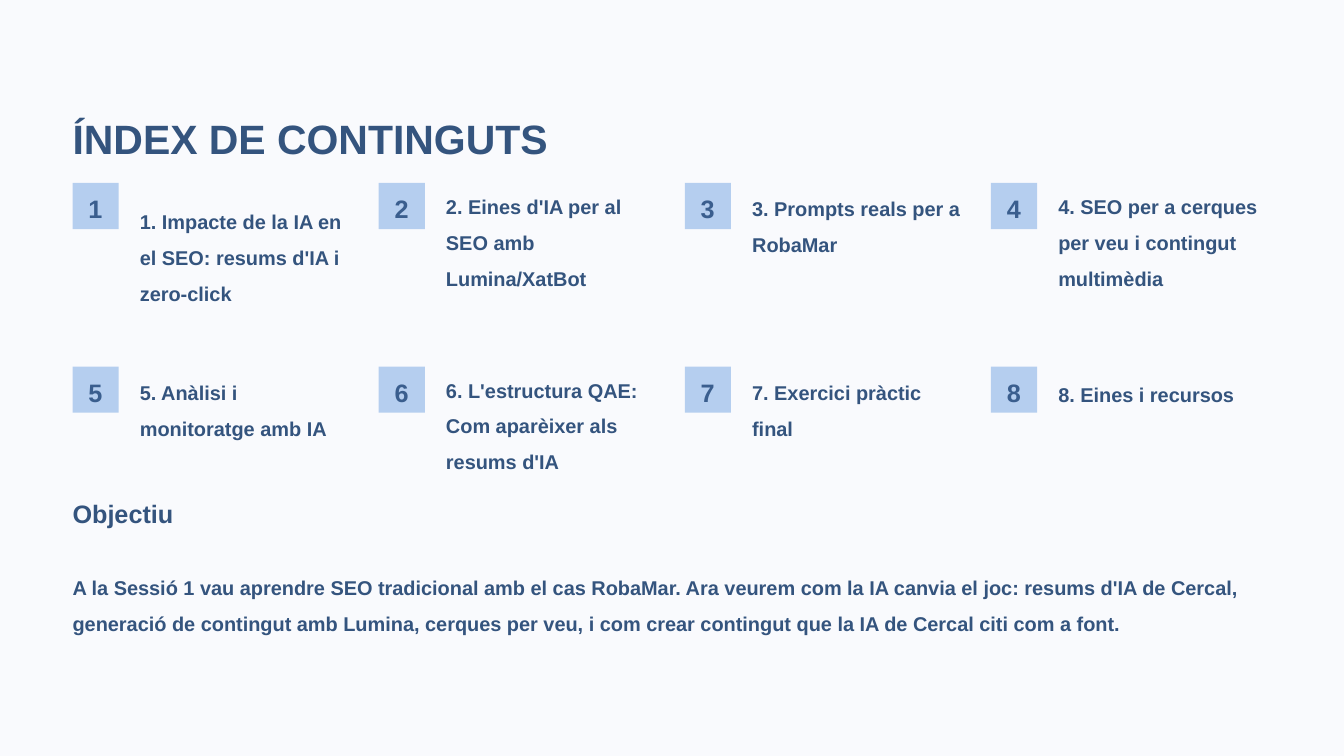
from lxml import etree
from pptx import Presentation
from pptx.dml.color import RGBColor
from pptx.enum.shapes import MSO_SHAPE
from pptx.enum.text import MSO_ANCHOR, MSO_AUTO_SIZE, PP_ALIGN
from pptx.oxml.ns import qn
from pptx.util import Inches, Pt

COLORS = {"wash": "F6F8FC", "tile": "B5CEEF", "text": "34547E", "number": "3A5E8E"}
LEFT, WIDTH = 0.96, 15.85
COL_STEP, ROW_TOP, ROW_STEP = 4.05, 2.42, 2.43
TILE, LINE_HEIGHT = 0.61, 0.41

# Entry text and the number of lines its box is tall
TOPICS = [
    ("1. Impacte de la IA en el SEO: resums d'IA i zero-click", 4),
    ("2. Eines d'IA per al SEO amb Lumina/XatBot", 3),
    ("3. Prompts reals per a RobaMar", 2),
    ("4. SEO per a cerques per veu i contingut multimèdia", 3),
    ("5. Anàlisi i monitoratge amb IA", 2),
    ("6. L'estructura QAE: Com aparèixer als resums d'IA", 3),
    ("7. Exercici pràctic final", 2),
    ("8. Eines i recursos", 1),
]
OBJECTIVE = (
    "A la Sessió 1 vau aprendre SEO tradicional amb el cas RobaMar. "
    "Ara veurem com la IA canvia el joc: resums d'IA de Cercal, "
    "generació de contingut amb Lumina, cerques per veu, "
    "i com crear contingut que la IA de Cercal citi com a font."
)

prs = Presentation()
prs.slide_width, prs.slide_height = Inches(17.78), Inches(10)
s = prs.slides.add_slide(prs.slide_layouts[5])


def add_rect(x, y, w, h, color):
    sp = s.shapes.add_shape(MSO_SHAPE.RECTANGLE, Inches(x), Inches(y), Inches(w), Inches(h))
    sp.shadow.inherit = False
    sp.fill.solid()
    sp.fill.fore_color.rgb = RGBColor.from_string(COLORS[color])
    sp.line.fill.background()
    return sp


def put_text(text, x, y, w, h, size=19, spacing=1.5, color="text", sp=None):
    """Write bold text in a new text box, or in sp if one is given."""
    sp = sp or s.shapes.add_textbox(0, 0, 0, 0)
    sp.left, sp.top, sp.width, sp.height = Inches(x), Inches(y), Inches(w), Inches(h)
    tf = sp.text_frame
    tf.text = text
    tf.word_wrap = True
    tf.auto_size = MSO_AUTO_SIZE.NONE
    tf.vertical_anchor = MSO_ANCHOR.MIDDLE
    tf.margin_left = tf.margin_right = tf.margin_top = tf.margin_bottom = 0
    p = tf.paragraphs[0]
    p.alignment = PP_ALIGN.LEFT
    p.line_spacing = spacing
    font = p.runs[0].font
    font.name, font.size, font.bold = "Arial", Pt(size), True
    font.color.rgb = RGBColor.from_string(COLORS[color])


# Translucent wash behind everything
wash = add_rect(0, 0, 17.78, 10, "wash")
wash_color = wash.element.spPr.find(qn("a:solidFill"))[0]
etree.SubElement(wash_color, qn("a:alpha"), val="60000")
title = s.shapes.title
title.element.addprevious(wash.element)

put_text("ÍNDEX DE CONTINGUTS", LEFT, 1.44, WIDTH, 0.65, size=39, spacing=1.2, sp=title)

# Numbered topics, four to a row
for i, (topic, lines) in enumerate(TOPICS):
    row, col = divmod(i, 4)
    x, y = LEFT + col * COL_STEP, ROW_TOP + row * ROW_STEP
    add_rect(x, y, TILE, TILE, "tile")
    put_text(str(i + 1), x + 0.21, y + 0.1, 0.33, 0.4, size=24, spacing=1.2, color="number")
    put_text(topic, x + 0.89, y + 0.09, 2.81, lines * LINE_HEIGHT)

put_text("Objectiu", LEFT, 6.5, WIDTH, 0.49, size=24, spacing=1.2)
put_text(OBJECTIVE, LEFT, 7.31, WIDTH, 1.24)

prs.save("out.pptx")
